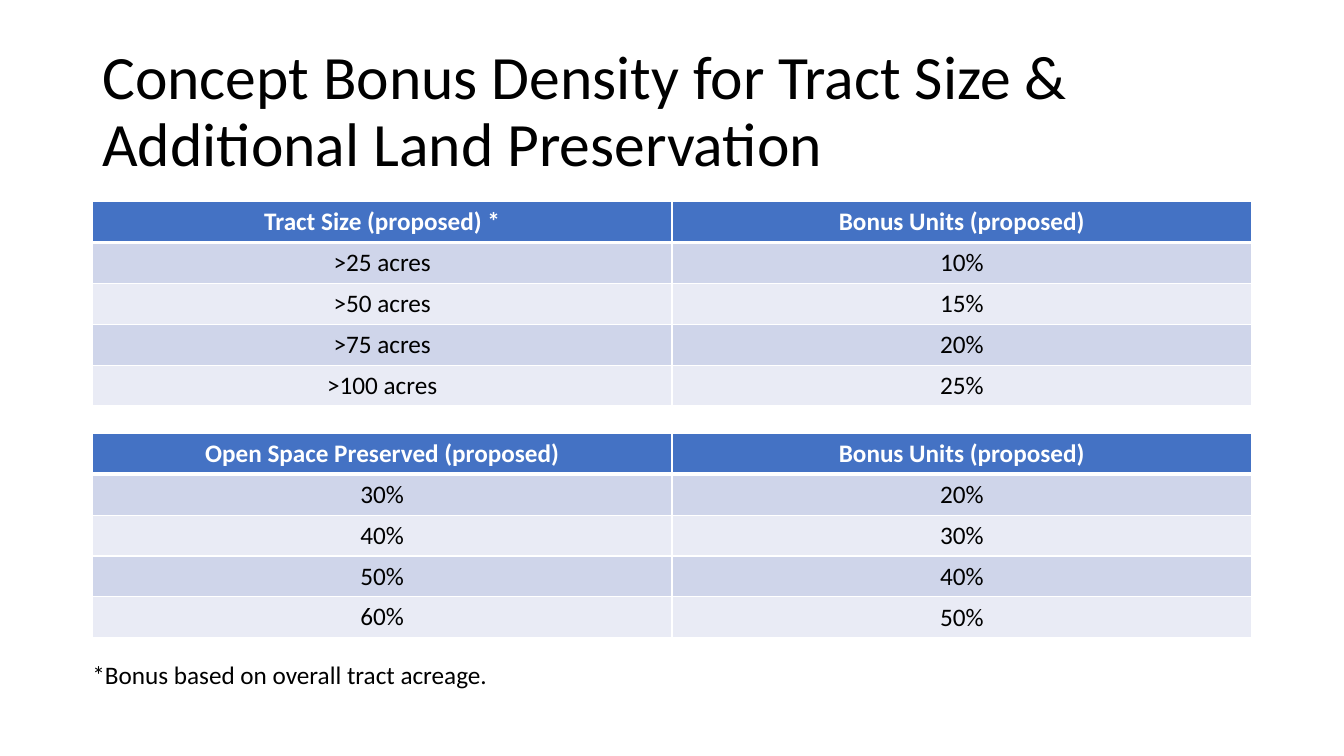
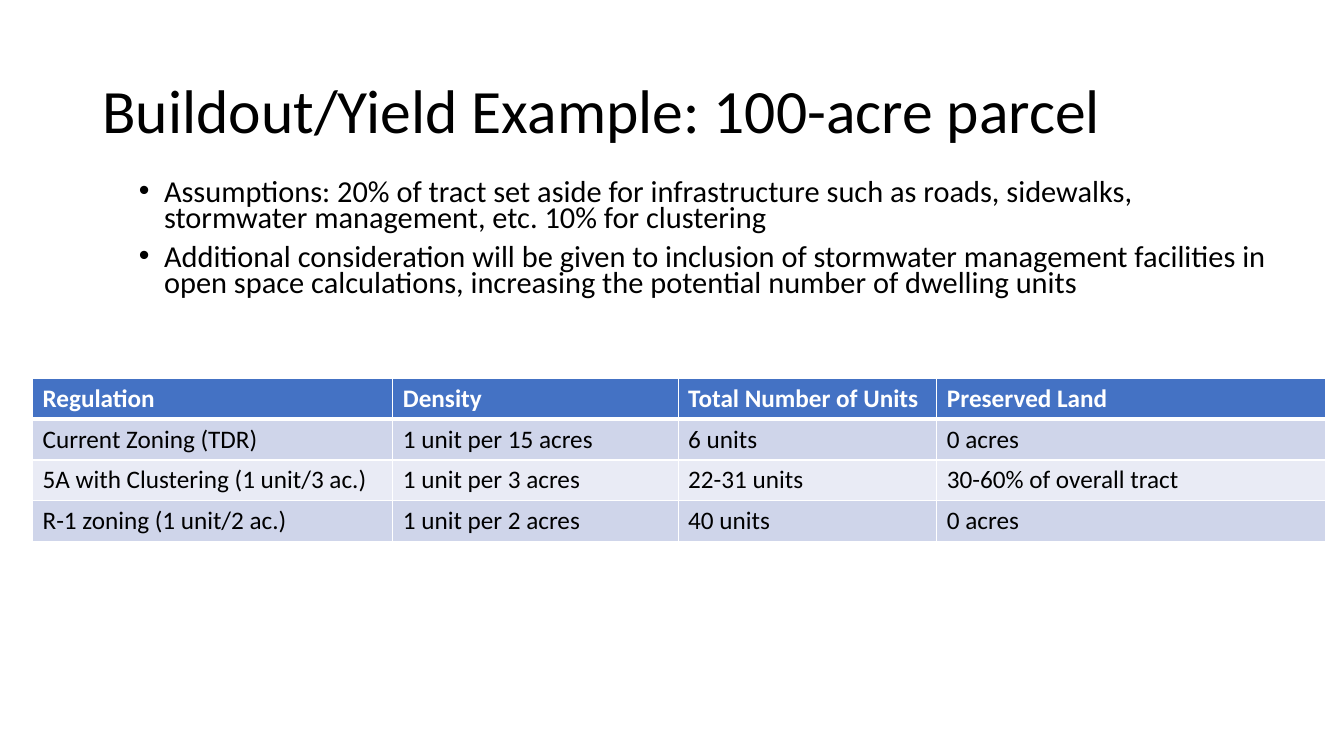
from lxml import etree
from pptx import Presentation
from pptx import util as u
from pptx.dml.color import RGBColor
from pptx.enum import text
from pptx.oxml.ns import qn

COLORS = {
    "text": "000000",
    "white": "FFFFFF",
    "header": "4472C4",
    "odd_row": "CFD5EA",
    "even_row": "E9EBF5",
}
FONT = "Calibri"
LEFT, WIDTH = 2.33, 29.21
ROW_HEIGHT = 1.03


def add_run(paragraph, words, size=18, color="text", bold=False):
    run = paragraph.add_run()
    run.text = words
    run.font.name = FONT
    run.font.size = u.Pt(size)
    run.font.bold = bold
    run.font.color.rgb = RGBColor.from_string(COLORS[color])


def add_text_frame(slide, left, top, width, height, anchor=text.MSO_ANCHOR.TOP):
    shape = slide.shapes.add_textbox(u.Cm(left), u.Cm(top), u.Cm(width), u.Cm(height))
    frame = shape.text_frame
    frame.word_wrap = True
    frame.vertical_anchor = anchor
    return frame


def add_titled_slide(presentation, title):
    slide = presentation.slides.add_slide(presentation.slide_layouts[6])
    frame = add_text_frame(slide, LEFT, 1.01, WIDTH, 3.68, text.MSO_ANCHOR.MIDDLE)
    paragraph = frame.paragraphs[0]
    paragraph.line_spacing = 0.9
    add_run(paragraph, title, 44)
    return slide


def add_bullets(slide, items, left, top, width, height):
    frame = add_text_frame(slide, left, top, width, height)
    for index, item in enumerate(items):
        paragraph = frame.add_paragraph() if index else frame.paragraphs[0]
        paragraph.line_spacing = 0.7
        paragraph.space_before = u.Pt(10)
        add_run(paragraph, item, 21.7)
        properties = paragraph._p.get_or_add_pPr()
        properties.set("marL", str(u.Cm(0.635)))
        properties.set("indent", str(-u.Cm(0.635)))
        etree.SubElement(properties, qn("a:buFont")).set("typeface", "Arial")
        etree.SubElement(properties, qn("a:buChar")).set("char", "•")


def set_borders(cell, top, bottom):
    properties = cell._tc.get_or_add_tcPr()
    for side, points in (("L", 1), ("R", 1), ("T", top), ("B", bottom)):
        line = etree.SubElement(properties, qn(f"a:ln{side}"), w=str(u.Pt(points)))
        fill = etree.SubElement(line, qn("a:solidFill"))
        etree.SubElement(fill, qn("a:srgbClr"), val=COLORS["white"])


def center_value(cell):
    cell.vertical_anchor = text.MSO_ANCHOR.MIDDLE
    cell.margin_left = cell.margin_right = cell.margin_top = u.Cm(0.02)
    cell.margin_bottom = 0


def style_cell(cell, words, row, alignment):
    is_header = row == 0
    set_borders(cell, top=3 if row == 1 else 1, bottom=3 if is_header else 1)
    fill_name = "header" if is_header else "odd_row" if row % 2 else "even_row"
    cell.fill.solid()
    cell.fill.fore_color.rgb = RGBColor.from_string(COLORS[fill_name])
    paragraph = cell.text_frame.paragraphs[0]
    paragraph.alignment = alignment
    add_run(paragraph, words, color="white" if is_header else "text", bold=is_header)


def add_table(slide, rows, left, top, widths, alignment=text.PP_ALIGN.LEFT):
    frame = slide.shapes.add_table(
        len(rows), len(widths), u.Cm(left), u.Cm(top),
        u.Cm(sum(widths)), u.Cm(ROW_HEIGHT * len(rows)))
    table = frame.table
    for column, width in zip(table.columns, widths):
        column.width = u.Cm(width)
    for row_index, values in enumerate(rows):
        for column_index, words in enumerate(values):
            style_cell(table.cell(row_index, column_index), words, row_index, alignment)
    return table


def add_bonus_table(slide, heading, bonuses, top):
    rows = [(heading, "Bonus Units (proposed)"), *bonuses]
    table = add_table(slide, rows, LEFT, top, [WIDTH / 2] * 2, text.PP_ALIGN.CENTER)
    for row in range(1, len(rows)):
        center_value(table.cell(row, 1))


def add_density_slide(presentation):
    slide = add_titled_slide(
        presentation, "Concept Bonus Density for Tract Size & Additional Land Preservation")
    add_bonus_table(slide, "Tract Size (proposed) *", [
        (">25 acres", "10%"),
        (">50 acres", "15%"),
        (">75 acres", "20%"),
        (">100 acres", "25%"),
    ], 5.08)
    add_bonus_table(slide, "Open Space Preserved (proposed)", [
        ("30%", "20%"),
        ("40%", "30%"),
        ("50%", "40%"),
        ("60%", "50%"),
    ], 10.92)
    footnote = add_text_frame(slide, 2.08, 16.48, 10.65, 1.03)
    add_run(footnote.paragraphs[0], "*Bonus based on overall tract acreage.")


def add_yield_slide(presentation):
    slide = add_titled_slide(presentation, "Buildout/Yield Example: 100-acre parcel")
    add_bullets(slide, [
        "Assumptions: 20% of tract set aside for infrastructure such as roads, "
        "sidewalks, stormwater management, etc. 10% for clustering",
        "Additional consideration will be given to inclusion of stormwater management "
        "facilities in open space calculations, increasing the potential number of "
        "dwelling units",
    ], 3.25, 4.47, 28.96, 4.17)
    add_table(slide, [
        ("Regulation", "Density", "Total Number of Units", "Preserved Land"),
        ("Current Zoning (TDR)", "1 unit per 15 acres", "6 units", "0 acres"),
        ("5A with Clustering (1 unit/3 ac.)", "1 unit per 3 acres", "22-31 units",
         "30-60% of overall tract"),
        ("R-1 zoning (1 unit/2 ac.)", "1 unit per 2 acres", "40 units", "0 acres"),
    ], 0.82, 9.53, [9.08, 7.19, 6.52, 9.8])


def main():
    """Build the two density slides and save them."""
    presentation = Presentation()
    presentation.slide_width = u.Cm(33.87)
    presentation.slide_height = u.Cm(19.05)
    add_density_slide(presentation)
    add_yield_slide(presentation)
    presentation.save("out.pptx")


if __name__ == "__main__":
    main()
